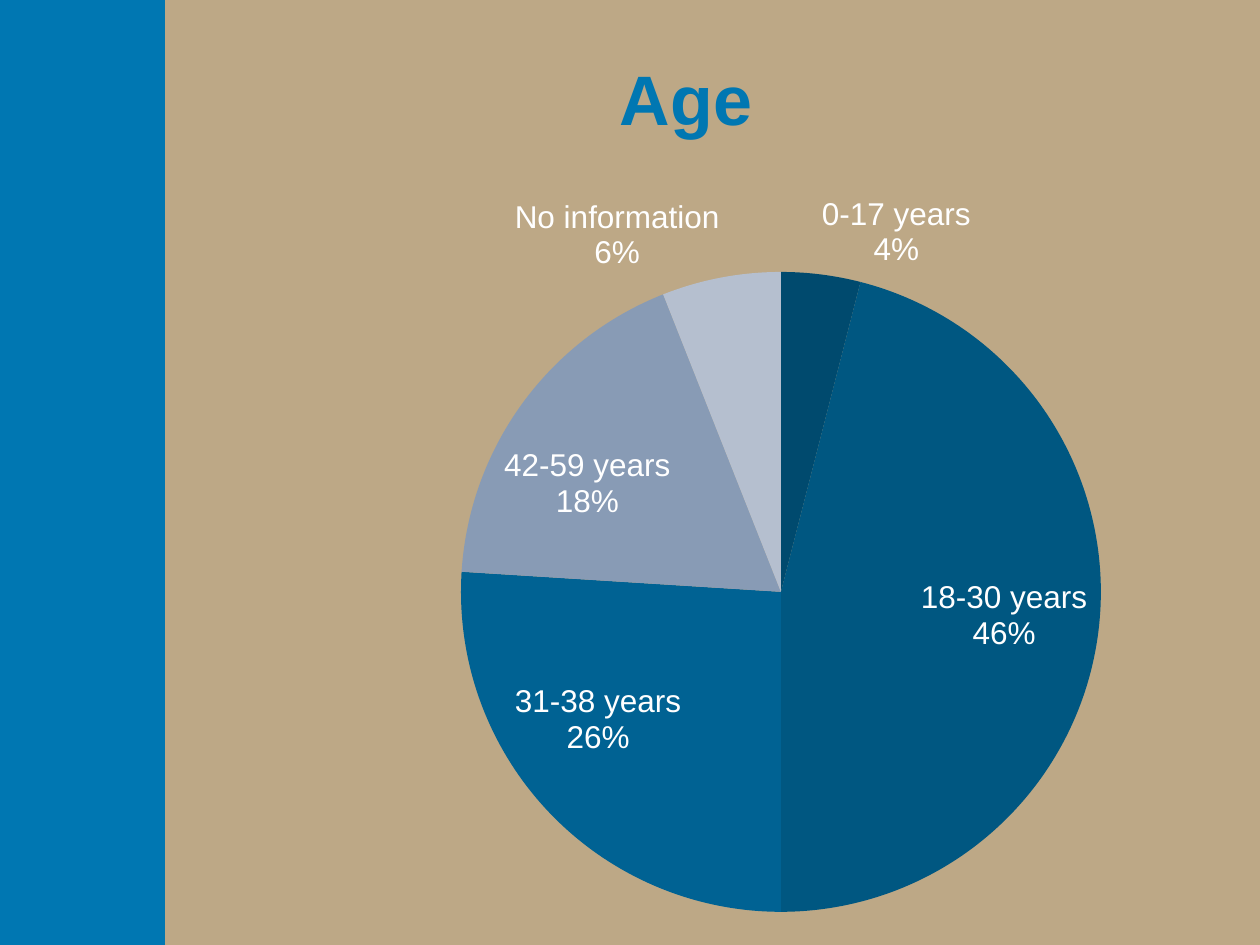
from lxml.etree import SubElement
from pptx import Presentation
from pptx.chart.data import CategoryChartData
from pptx.dml.color import RGBColor
from pptx.enum.chart import XL_CHART_TYPE, XL_LABEL_POSITION
from pptx.enum.shapes import MSO_SHAPE
from pptx.enum.text import MSO_ANCHOR, PP_ALIGN
from pptx.oxml.ns import qn
from pptx.util import Pt

EMU_PER_PX = 914400 // 126
SLIDE_WIDTH, SLIDE_HEIGHT = 1260, 945
COLORS = {"background": "BDA886", "accent": "0077B2", "label": "FFFFFF"}
AGE_GROUPS = [
    ("0-17 years", 4, "004A6E"),
    ("18-30 years", 46, "005781"),
    ("31-38 years", 26, "006293"),
    ("42-59 years", 18, "889BB5"),
    ("No information", 6, "B5BFCF"),
]


def emu(*lengths):
    return [length * EMU_PER_PX for length in lengths]


def paint(fill, color):
    fill.solid()
    fill.fore_color.rgb = RGBColor.from_string(color)


class SlideBuilder:
    def __init__(self, slide, font_name="Arial"):
        self.slide = slide
        self.font_name = font_name

    def style_font(self, font, size, color, bold=False):
        font.name = self.font_name
        font.size = Pt(size)
        font.bold = bold
        font.color.rgb = RGBColor.from_string(color)

    def background(self, color):
        paint(self.slide.background.fill, color)

    def rectangle(self, box, color):
        shape = self.slide.shapes.add_shape(MSO_SHAPE.RECTANGLE, *emu(*box))
        shape.shadow.inherit = False
        paint(shape.fill, color)
        shape.line.fill.background()

    def title(self, box, text, size, color):
        text_frame = self.slide.shapes.add_textbox(*emu(*box)).text_frame
        text_frame.word_wrap = True
        text_frame.vertical_anchor = MSO_ANCHOR.MIDDLE
        text_frame.text = text
        paragraph = text_frame.paragraphs[0]
        paragraph.alignment = PP_ALIGN.CENTER
        self.style_font(paragraph.runs[0].font, size, color, bold=True)

    def pie(self, box, plot_box, groups, size, color):
        """Draw a labelled pie; plot_box gives the circle's bounds on the slide."""
        names, values, slice_colors = zip(*groups)
        data = CategoryChartData()
        data.categories = names
        data.add_series("Series 1", values)
        chart = self.slide.shapes.add_chart(XL_CHART_TYPE.PIE, *emu(*box), data).chart
        chart.has_title = False
        chart.has_legend = False
        self.style_font(chart.font, size, color)

        plot = chart.plots[0]
        plot.vary_by_categories = True
        for index, slice_color in enumerate(slice_colors):
            slice_format = plot.series[0].points[index].format
            paint(slice_format.fill, slice_color)
            slice_format.line.fill.background()

        labels = plot.series[0].data_labels
        labels.show_category_name = True
        labels.show_percentage = True
        labels.show_value = False
        labels.position = XL_LABEL_POSITION.BEST_FIT
        self.style_font(labels.font, size, color)
        labels_xml = plot.series[0]._element.find(qn("c:dLbls"))
        separator = SubElement(labels_xml, qn("c:separator"))
        separator.text = "\n"
        last_flag = labels_xml.find(qn("c:showBubbleSize"))
        if last_flag is None:
            last_flag = labels_xml.find(qn("c:showPercent"))
        last_flag.addnext(separator)
        self.place_plot(chart, box, plot_box)

    def place_plot(self, chart, box, plot_box):
        plot_area = chart._chartSpace.find(f".//{qn('c:plotArea')}")
        layout = plot_area.find(qn("c:layout"))
        if layout is None:
            layout = SubElement(plot_area, qn("c:layout"))
            plot_area.insert(0, layout)
        left, top, width, height = box
        plot_left, plot_top, plot_width, plot_height = plot_box
        settings = {
            "layoutTarget": "inner",
            "xMode": "edge",
            "yMode": "edge",
            "x": (plot_left - left) / width,
            "y": (plot_top - top) / height,
            "w": plot_width / width,
            "h": plot_height / height,
        }
        manual = SubElement(layout, qn("c:manualLayout"))
        for name, value in settings.items():
            SubElement(manual, qn(f"c:{name}")).set("val", str(value))


def main():
    presentation = Presentation()
    presentation.slide_width, presentation.slide_height = emu(SLIDE_WIDTH, SLIDE_HEIGHT)
    builder = SlideBuilder(presentation.slides.add_slide(presentation.slide_layouts[6]))
    builder.background(COLORS["background"])
    builder.rectangle((0, 0, 165, SLIDE_HEIGHT), COLORS["accent"])
    builder.title((184, 18, 1004, 158), "Age", 40, COLORS["accent"])
    builder.pie((194, 145, 1032, 784), (461, 272, 640, 640), AGE_GROUPS, 18, COLORS["label"])
    presentation.save("out.pptx")


if __name__ == "__main__":
    main()
